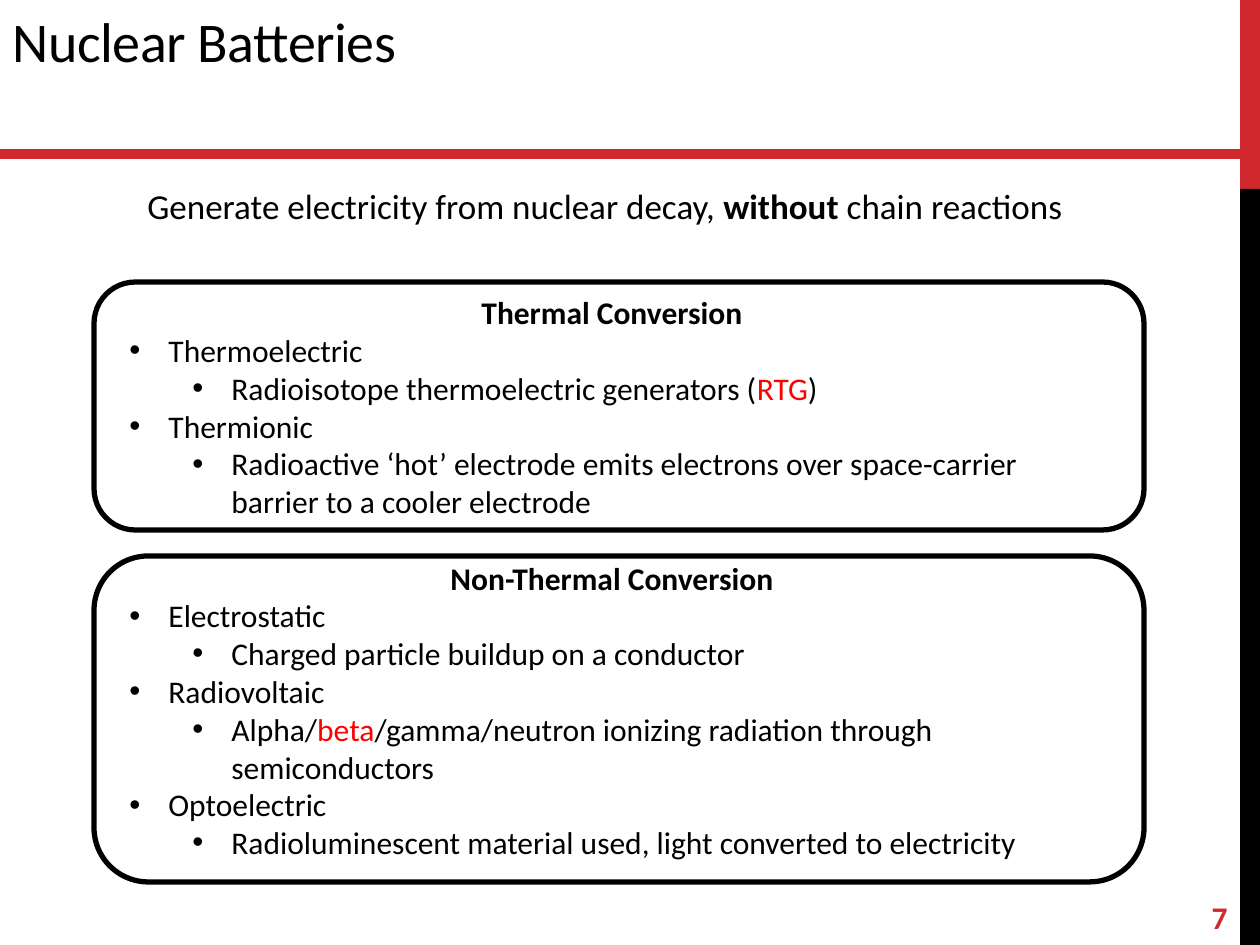
"""Build the Nuclear Batteries slide."""
import dataclasses

import lxml.etree
import pptx
import pptx.dml.color
import pptx.enum.shapes
import pptx.enum.text
import pptx.oxml.ns
import pptx.util

RGBColor = pptx.dml.color.RGBColor
SHAPE = pptx.enum.shapes.MSO_SHAPE
ALIGN = pptx.enum.text.PP_ALIGN
ANCHOR = pptx.enum.text.MSO_ANCHOR
BLACK = RGBColor(0x00, 0x00, 0x00)
CRIMSON = RGBColor(0xD1, 0x28, 0x2E)
RED = RGBColor(0xFF, 0x00, 0x00)
FONT = "Calibri"
PX_PER_INCH = 126
HANG = 39
SUB_INDENT = 102


@dataclasses.dataclass(frozen=True)
class Box:
    left: int
    top: int
    width: int
    height: int

    def emu(self) -> tuple:
        return px(self.left), px(self.top), px(self.width), px(self.height)


@dataclasses.dataclass(frozen=True)
class Item:
    text: str
    detail: str
    accent: str = ""
    rest: str = ""


@dataclasses.dataclass(frozen=True)
class Group:
    heading: str
    frame: Box
    space_before: int
    items: tuple


GROUPS = (
    Group("Thermal Conversion", Box(94, 282, 1050, 248), 0, (
        Item("Thermoelectric", "Radioisotope thermoelectric generators (", "RTG", ")"),
        Item("Thermionic", "Radioactive ‘hot’ electrode emits electrons over "
             "space-carrier barrier to a cooler electrode"),
    )),
    Group("Non-Thermal Conversion", Box(94, 556, 1050, 326), 22, (
        Item("Electrostatic", "Charged particle buildup on a conductor"),
        Item("Radiovoltaic", "Alpha/", "beta",
             "/gamma/neutron ionizing radiation through semiconductors"),
        Item("Optoelectric",
             "Radioluminescent material used, light converted to electricity"),
    )),
)


def px(n: int) -> pptx.util.Emu:
    return pptx.util.Emu(round(n * 914400 / PX_PER_INCH))


def write(p, text: str, *, size: int = 18, bold: bool = False,
          color: RGBColor = BLACK, spacing: int = 0) -> None:
    r = p.add_run()
    r.text = text
    r.font.name = FONT
    r.font.size = pptx.util.Pt(size)
    r.font.bold = bold
    r.font.color.rgb = color
    if spacing:
        r._r.get_or_add_rPr().set("spc", str(spacing))


def add_text_box(s, box: Box):
    tf = s.shapes.add_textbox(*box.emu()).text_frame
    tf.word_wrap = True
    return tf


def add_bar(s, box: Box, color: RGBColor) -> None:
    sp = s.shapes.add_shape(SHAPE.RECTANGLE, *box.emu())
    sp.shadow.inherit = False
    sp.fill.solid()
    sp.fill.fore_color.rgb = color
    sp.line.fill.background()


def add_frame(s, box: Box) -> None:
    sp = s.shapes.add_shape(SHAPE.ROUNDED_RECTANGLE, *box.emu())
    sp.shadow.inherit = False
    sp.fill.background()
    sp.line.color.rgb = BLACK
    sp.line.width = pptx.util.Pt(3)


def add_rule(s, y: int, right: int) -> None:
    line = s.shapes.add_connector(
        pptx.enum.shapes.MSO_CONNECTOR.STRAIGHT, 0, px(y), px(right), px(y))
    line.line.color.rgb = CRIMSON
    line.line.width = pptx.util.Pt(6)
    lxml.etree.SubElement(line._element.spPr, pptx.oxml.ns.qn("a:effectLst"))


def add_bullet(tf, level: int):
    p = tf.add_paragraph()
    p.level = level
    pPr = p._p.get_or_add_pPr()
    pPr.set("marL", str(px(SUB_INDENT if level else HANG)))
    pPr.set("indent", str(-px(HANG)))
    qn = pptx.oxml.ns.qn
    lxml.etree.SubElement(pPr, qn("a:buFont"), typeface="Arial")
    lxml.etree.SubElement(pPr, qn("a:buChar"), char="•")
    return p


def add_group(tf, group: Group) -> None:
    p = tf.add_paragraph() if group.space_before else tf.paragraphs[0]
    p.alignment = ALIGN.CENTER
    if group.space_before:
        p.space_before = pptx.util.Pt(group.space_before)
    write(p, group.heading, bold=True)
    for item in group.items:
        write(add_bullet(tf, 0), item.text)
        p = add_bullet(tf, 1)
        write(p, item.detail)
        if item.accent:
            write(p, item.accent, color=RED)
            write(p, item.rest)


def set_title(s, text: str) -> None:
    title = s.shapes.title
    title.left, title.top, title.width, title.height = Box(0, 0, 925, 163).emu()
    tf = title.text_frame
    tf.auto_size = pptx.enum.text.MSO_AUTO_SIZE.NONE
    tf.vertical_anchor = ANCHOR.TOP
    p = tf.paragraphs[0]
    p.alignment = ALIGN.LEFT
    write(p, text, size=32, spacing=-30)


def main() -> None:
    prs = pptx.Presentation()
    prs.slide_width, prs.slide_height = px(1260), px(945)
    s = prs.slides.add_slide(prs.slide_layouts[5])

    add_bar(s, Box(1240, 0, 20, 189), CRIMSON)
    add_bar(s, Box(1240, 189, 20, 756), BLACK)
    set_title(s, "Nuclear Batteries")
    add_rule(s, 154, 1241)

    tf = add_text_box(s, Box(1058, 892, 182, 50))
    tf.vertical_anchor = ANCHOR.MIDDLE
    p = tf.paragraphs[0]
    p.alignment = ALIGN.RIGHT
    write(p, "7", bold=True, color=CRIMSON)

    p = add_text_box(s, Box(135, 178, 969, 55)).paragraphs[0]
    write(p, "Generate electricity from nuclear decay, ", size=20)
    write(p, "without ", size=20, bold=True)
    write(p, "chain reactions", size=20)

    tf = add_text_box(s, Box(117, 287, 990, 624))
    for group in GROUPS:
        add_group(tf, group)
        add_frame(s, group.frame)

    prs.save("out.pptx")


if __name__ == "__main__":
    main()
